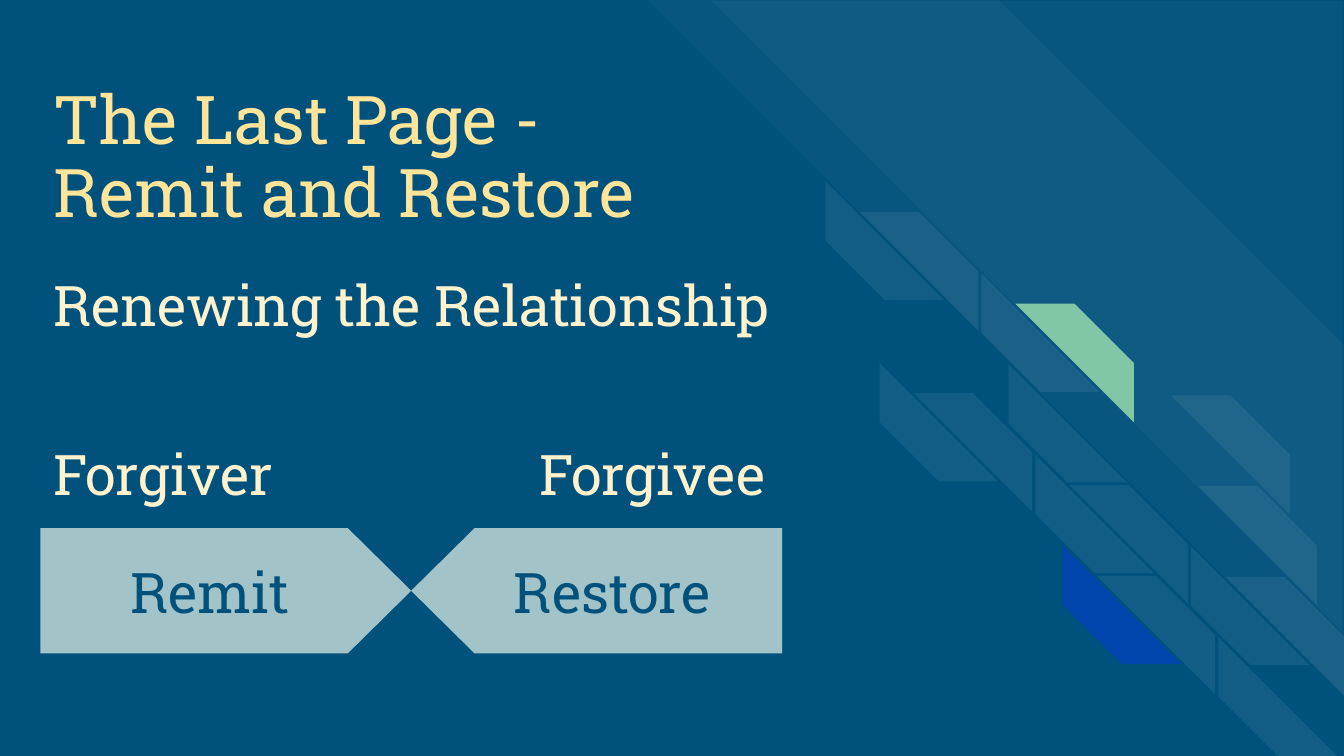
from pptx import Presentation
from pptx.dml.color import RGBColor
from pptx.enum import shapes, text
from pptx.oxml import ns
from pptx.util import Pt
from lxml import etree

NAVY = RGBColor(0x00, 0x51, 0x7C)
WHITE = RGBColor(0xFF, 0xFF, 0xFF)
GREEN = RGBColor(0x82, 0xC7, 0xA5)
BLUE = RGBColor(0x01, 0x45, 0xAC)
TEAL = RGBColor(0xA2, 0xC4, 0xC9)
GOLD = RGBColor(0xFF, 0xE5, 0x99)
CREAM = RGBColor(0xFF, 0xF2, 0xCC)

TILE = 63.5
LEFT_TILES = [(0, 0), (0, 2), (1, 0), (1, 1), (1, 2), (1, 3), (2, 2), (2, 3)]
RIGHT_TILES = [(0, 0), (0, 2), (1, 0), (2, 0), (2, 1), (1, 2), (1, 3), (2, 2)]


class Deck:
    font = "Roboto Slab"
    inset = Pt(7.2)

    def __init__(self, width, height):
        self.prs = Presentation()
        self.prs.slide_width, self.prs.slide_height = Pt(width), Pt(height)

    def add_slide(self, color):
        self.s = self.prs.slides.add_slide(self.prs.slide_layouts[5])
        self.s.background.fill.solid()
        self.s.background.fill.fore_color.rgb = color

    def set_text(self, sp, words, size, color, align, spacing=1.0):
        tf = sp.text_frame
        tf.text = words
        tf.word_wrap = True
        tf.auto_size = text.MSO_AUTO_SIZE.NONE
        tf.vertical_anchor = text.MSO_ANCHOR.MIDDLE
        tf.margin_left = tf.margin_right = self.inset
        tf.margin_top = tf.margin_bottom = self.inset
        for p in tf.paragraphs:
            p.alignment = align
            p.line_spacing = spacing
            for r in p.runs:
                r.font.name = self.font
                r.font.size = Pt(size)
                r.font.color.rgb = color

    def shape(self, kind, box, color, adj, rotation=0, flip=False, alpha=100):
        sp = self.s.shapes.add_shape(kind, *map(Pt, box))
        sp.shadow.inherit = False
        sp.adjustments[0] = adj
        sp.rotation = rotation
        sp.line.fill.background()
        sp.fill.solid()
        sp.fill.fore_color.rgb = color
        if flip:
            sp._element.spPr.find(ns.qn("a:xfrm")).set("flipH", "1")
        if alpha < 100:
            clr = sp._element.spPr.find(ns.qn("a:solidFill"))[0]
            etree.SubElement(clr, ns.qn("a:alpha")).set("val", str(alpha * 1000))
        return sp

    def stripe(self, box, color, adj, **style):
        self.shape(shapes.MSO_SHAPE.DIAGONAL_STRIPE, box, color, adj, **style)

    def tile(self, col, row, right, color=None):
        x = 442.2 + 83.5 * col + 14.5 * row + 18.3 * right
        y = 97.2 + 49.2 * col + 48.6 * row + 16.3 * right
        self.stripe((x, y, TILE, TILE), color or WHITE, 0.5,
                    rotation=0 if right else 270, flip=right,
                    alpha=100 if color else 7)

    def arrow(self, box, words, flip=False):
        sp = self.shape(shapes.MSO_SHAPE.PENTAGON, box, TEAL, 0.506, flip=flip)
        self.set_text(sp, words, 30, NAVY, text.PP_ALIGN.CENTER)

    def title(self, box, words):
        sp = self.s.shapes.title
        sp.left, sp.top, sp.width, sp.height = map(Pt, box)
        self.set_text(sp, words, 36, GOLD, text.PP_ALIGN.LEFT, 0.9)

    def heading(self, box, words):
        sp = self.s.shapes.add_textbox(*map(Pt, box))
        self.set_text(sp, words, 30, CREAM, text.PP_ALIGN.LEFT, 0.9)


def main():
    deck = Deck(720, 405)
    deck.add_slide(NAVY)

    deck.stripe((347, 0, 373, 373), WHITE, 0.495, rotation=90, alpha=3)
    deck.stripe((381, 0.5, 338, 338), WHITE, 0, rotation=90, alpha=3)
    for col, row in LEFT_TILES:
        deck.tile(col, row, False, BLUE if (col, row) == (1, 3) else None)
    for col, row in RIGHT_TILES:
        deck.tile(col, row, True, GREEN if (col, row) == (1, 0) else None)

    deck.arrow((220.3, 283, 198.7, 67), "Restore", flip=True)
    deck.arrow((21.6, 283, 198.7, 67), "Remit")
    deck.heading((282, 229, 138.5, 54), "Forgivee")
    deck.heading((21.6, 229, 134.6, 54), "Forgiver")
    deck.title((21.6, 36, 375, 98.6), "The Last Page -\nRemit and Restore")
    deck.heading((21.6, 128.2, 406, 74), "Renewing the Relationship")

    deck.prs.save("out.pptx")


if __name__ == "__main__":
    main()
